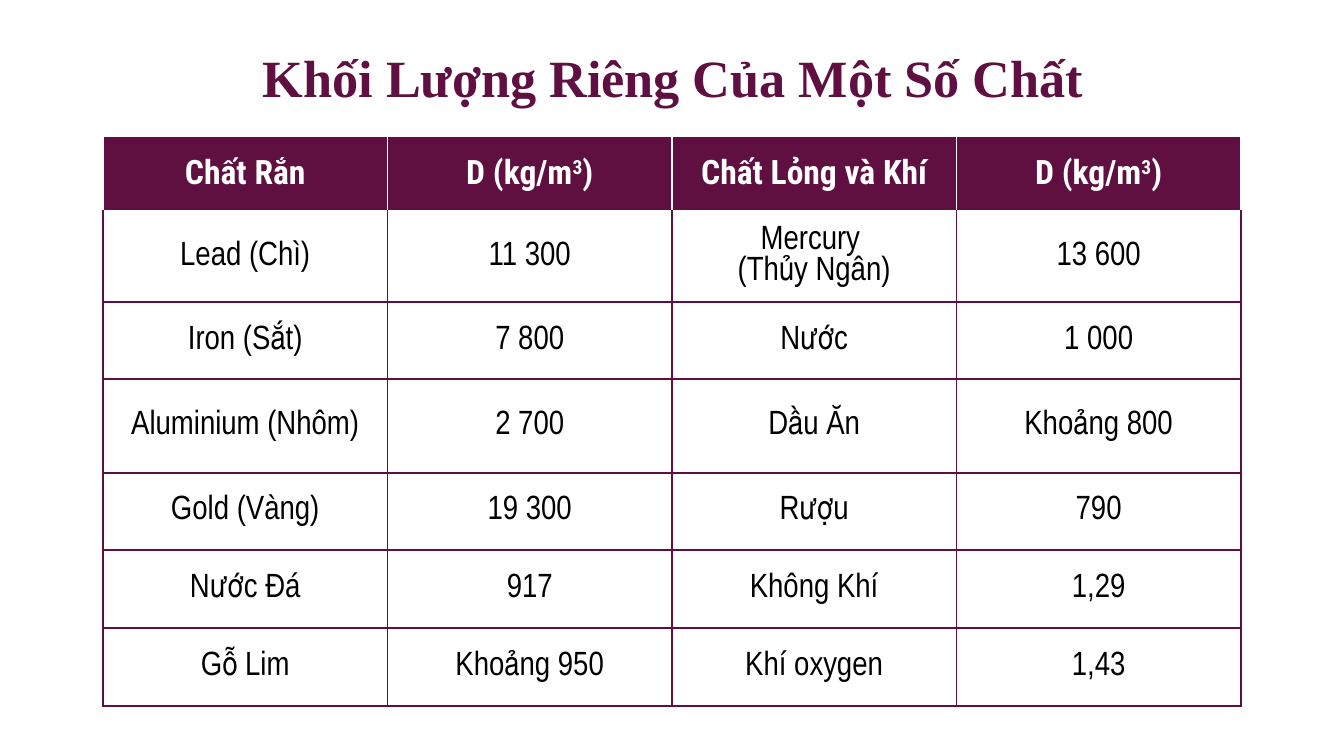
"""Build a slide with a table of the densities of common substances."""
from dataclasses import dataclass

import lxml.etree
import pptx
import pptx.dml.color
import pptx.enum.text
import pptx.oxml.ns
import pptx.util

EMU_PER_PX = 914400 / 134.4
COLORS = {"plum": "5F0F40", "white": "FFFFFF", "black": "000000"}
SUPERSCRIPT_MARK = "^"
DENSITY_HEADING = "D (kg/m^3^)"


@dataclass(frozen=True)
class TextStyle:
    font: str
    size: int
    color: str
    bold: bool


@dataclass(frozen=True)
class TableRow:
    height: int
    texts: tuple[str, str, str, str]


TITLE_STYLE = TextStyle("Times New Roman", 28, "plum", True)
HEADER_STYLE = TextStyle("Roboto Condensed", 18, "white", True)
BODY_STYLE = TextStyle("Arial Narrow", 18, "black", False)

ROWS = (
    TableRow(75, ("Chất Rắn", DENSITY_HEADING, "Chất Lỏng và Khí", DENSITY_HEADING)),
    TableRow(91, ("Lead (Chì)", "11 300", "Mercury \n(Thủy Ngân)", "13 600")),
    TableRow(77, ("Iron (Sắt)", "7 800", "Nước", "1 000")),
    TableRow(94, ("Aluminium (Nhôm)", "2 700", "Dầu Ăn", "Khoảng 800")),
    TableRow(77, ("Gold (Vàng)", "19 300", "Rượu", "790")),
    TableRow(78, ("Nước Đá", "917", "Không Khí", "1,29")),
    TableRow(78, ("Gỗ Lim", "Khoảng 950", "Khí oxygen", "1,43")),
)


def px(length: int) -> pptx.util.Emu:
    """Turn pixels into EMU."""
    return pptx.util.Emu(round(length * EMU_PER_PX))


def write_text(text_frame, text: str, style: TextStyle) -> None:
    """Write centred paragraphs, raising the parts between superscript marks."""
    text_frame.text = text
    for paragraph, line in zip(text_frame.paragraphs, text.split("\n")):
        paragraph.alignment = pptx.enum.text.PP_ALIGN.CENTER
        parts = line.split(SUPERSCRIPT_MARK)
        paragraph.text = parts[0]
        for part in parts[1:]:
            paragraph.add_run().text = part
        for index, run in enumerate(paragraph.runs):
            run.font.name = style.font
            run.font.size = pptx.util.Pt(style.size)
            run.font.bold = style.bold
            run.font.color.rgb = pptx.dml.color.RGBColor.from_string(COLORS[style.color])
            if index % 2:
                run._r.get_or_add_rPr().set("baseline", "30000")


def set_borders(cell, side_colors: dict[str, str]) -> None:
    """Give each named side of a cell a one-point line."""
    properties = cell._tc.get_or_add_tcPr()
    for position, (side, color) in enumerate(side_colors.items()):
        line = lxml.etree.Element(
            pptx.oxml.ns.qn(f"a:ln{side}"), w=str(pptx.util.Pt(1))
        )
        fill = lxml.etree.SubElement(line, pptx.oxml.ns.qn("a:solidFill"))
        lxml.etree.SubElement(fill, pptx.oxml.ns.qn("a:srgbClr"), val=COLORS[color])
        properties.insert(position, line)


def add_title(slide, text: str) -> None:
    """Add the centred slide title."""
    shape = slide.shapes.add_textbox(px(230), px(40), px(886), px(81))
    text_frame = shape.text_frame
    text_frame.word_wrap = True
    text_frame.vertical_anchor = pptx.enum.text.MSO_ANCHOR.BOTTOM
    for side in ("left", "top", "right", "bottom"):
        setattr(text_frame, f"margin_{side}", pptx.util.Inches(0.1))
    write_text(text_frame, text, TITLE_STYLE)


def add_density_table(slide, rows: tuple[TableRow, ...]) -> None:
    """Add the density table with its plum heading row."""
    height = sum(row.height for row in rows)
    shape = slide.shapes.add_table(
        len(rows), len(rows[0].texts), px(103), px(136), px(1138), px(height)
    )
    table = shape.table
    table.horz_banding = False
    for row_index, row in enumerate(rows):
        table.rows[row_index].height = px(row.height)
        is_header = row_index == 0
        line_color = "white" if is_header else "plum"
        side_colors = dict.fromkeys("LRTB", line_color)
        if row_index == 1:
            side_colors["T"] = "white"
        for column_index, text in enumerate(row.texts):
            cell = table.cell(row_index, column_index)
            cell.vertical_anchor = pptx.enum.text.MSO_ANCHOR.MIDDLE
            if is_header:
                cell.fill.solid()
                cell.fill.fore_color.rgb = pptx.dml.color.RGBColor.from_string(COLORS["plum"])
            else:
                cell.fill.background()
            set_borders(cell, side_colors)
            write_text(cell.text_frame, text, HEADER_STYLE if is_header else BODY_STYLE)


def main() -> None:
    """Build and save the presentation."""
    presentation = pptx.Presentation()
    presentation.slide_width = px(1344)
    presentation.slide_height = px(756)
    slide = presentation.slides.add_slide(presentation.slide_layouts[6])
    add_density_table(slide, ROWS)
    add_title(slide, "Khối Lượng Riêng Của Một Số Chất")
    presentation.save("out.pptx")


if __name__ == "__main__":
    main()
